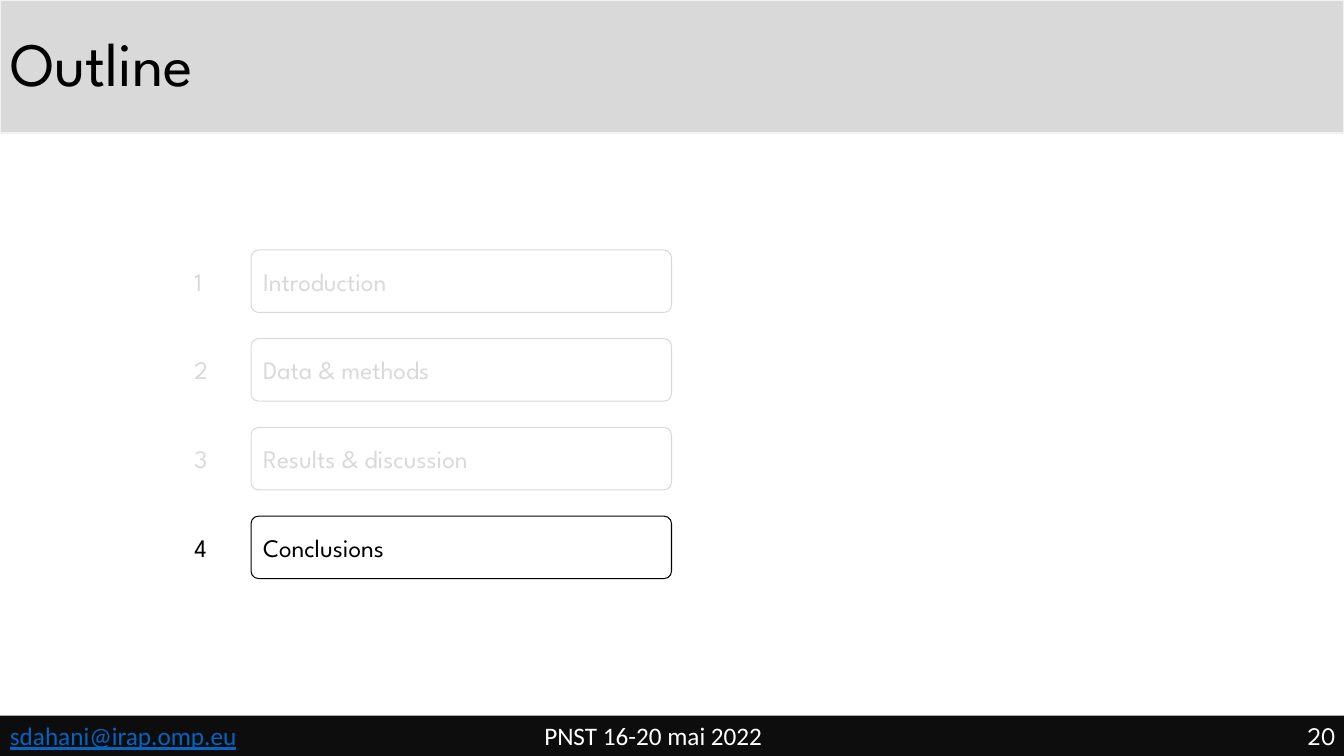
from dataclasses import dataclass

import pptx
import pptx.dml.color
import pptx.enum.shapes
import pptx.enum.text
import pptx.shapes.autoshape
import pptx.slide
import pptx.text.text
import pptx.util

Inches = pptx.util.Inches
Pt = pptx.util.Pt
MSO_SHAPE = pptx.enum.shapes.MSO_SHAPE
MIDDLE = pptx.enum.text.MSO_ANCHOR.MIDDLE
LEFT = pptx.enum.text.PP_ALIGN.LEFT

COLORS = {
    "band": "D9D9D9",
    "band_edge": "F2F2F2",
    "footer": "0D0D0D",
    "muted": "D9D9D9",
    "active": "000000",
    "link": "0563C1",
    "light": "FFFFFF",
}
HEADING_FONT = "League Spartan"
FOOTER_FONT = "Calibri"

SLIDE_WIDTH, SLIDE_HEIGHT = 13.33, 7.5
FOOTER_TOP, LINE_HEIGHT = 7.1, 0.4
FIRST_SECTION_TOP, SECTION_PITCH = 2.48, 0.88
SECTION_LEFT, SECTION_WIDTH, SECTION_HEIGHT = 2.49, 4.17, 0.62
NUMBER_LEFT, NUMBER_WIDTH = 1.83, 0.34

SECTIONS = ["Introduction", "Data & methods", "Results & discussion", "Conclusions"]
CURRENT_SECTION = "Conclusions"


@dataclass
class Caption:
    text: str
    left: float
    top: float
    width: float
    color: str
    font: str = HEADING_FONT
    underline: bool = False


FOOTER_CAPTIONS = [
    Caption("sdahani@irap.omp.eu", 0, FOOTER_TOP, 2.53, "link", FOOTER_FONT, True),
    Caption("PNST 16-20 mai 2022", 5.3, FOOTER_TOP, 2.63, "light", FOOTER_FONT),
    Caption("20", 12.87, FOOTER_TOP, 0.59, "light"),
]


def rgb(color: str) -> pptx.dml.color.RGBColor:
    return pptx.dml.color.RGBColor.from_string(COLORS[color])


def write(frame: pptx.text.text.TextFrame, text: str, color: str, size: int = 18,
          font: str = HEADING_FONT, underline: bool = False) -> None:
    frame.text = text
    frame.word_wrap = True
    paragraph = frame.paragraphs[0]
    paragraph.alignment = LEFT
    run_font = paragraph.runs[0].font
    run_font.name = font
    run_font.size = Pt(size)
    run_font.color.rgb = rgb(color)
    run_font.underline = underline


def add_caption(slide: pptx.slide.Slide, caption: Caption) -> None:
    box = slide.shapes.add_textbox(Inches(caption.left), Inches(caption.top),
                                   Inches(caption.width), Inches(LINE_HEIGHT))
    write(box.text_frame, caption.text, caption.color,
          font=caption.font, underline=caption.underline)


def add_title(slide: pptx.slide.Slide, text: str) -> None:
    title = slide.shapes.title
    title.left, title.top = Inches(0), Inches(0)
    title.width, title.height = Inches(SLIDE_WIDTH), Inches(1.32)
    title.fill.solid()
    title.fill.fore_color.rgb = rgb("band")
    title.line.color.rgb = rgb("band_edge")
    title.line.width = Pt(1)
    write(title.text_frame, text, "active", size=44)
    title.text_frame.vertical_anchor = MIDDLE
    title.text_frame.paragraphs[0].line_spacing = 0.9


def add_footer(slide: pptx.slide.Slide) -> None:
    bar = slide.shapes.add_shape(MSO_SHAPE.RECTANGLE, Inches(0), Inches(FOOTER_TOP),
                                 Inches(SLIDE_WIDTH), Inches(LINE_HEIGHT))
    bar.shadow.inherit = False
    bar.fill.solid()
    bar.fill.fore_color.rgb = rgb("footer")
    bar.line.fill.background()
    for caption in FOOTER_CAPTIONS:
        add_caption(slide, caption)


def add_section(slide: pptx.slide.Slide, number: int, name: str) -> None:
    top = FIRST_SECTION_TOP + (number - 1) * SECTION_PITCH
    color = "active" if name == CURRENT_SECTION else "muted"
    box = slide.shapes.add_shape(MSO_SHAPE.ROUNDED_RECTANGLE, Inches(SECTION_LEFT), Inches(top),
                                 Inches(SECTION_WIDTH), Inches(SECTION_HEIGHT))
    box.adjustments[0] = 0.12
    box.shadow.inherit = False
    box.fill.background()
    box.line.color.rgb = rgb(color)
    box.line.width = Pt(0.75)
    write(box.text_frame, name, color)
    box.text_frame.vertical_anchor = MIDDLE

    number_top = top + (SECTION_HEIGHT - LINE_HEIGHT) / 2
    add_caption(slide, Caption(str(number), NUMBER_LEFT, number_top, NUMBER_WIDTH, color))


def main() -> None:
    presentation = pptx.Presentation()
    presentation.slide_width = Inches(SLIDE_WIDTH)
    presentation.slide_height = Inches(SLIDE_HEIGHT)
    slide = presentation.slides.add_slide(presentation.slide_layouts.get_by_name("Title Only"))
    add_title(slide, "Outline")
    for number, name in enumerate(SECTIONS, start=1):
        add_section(slide, number, name)
    add_footer(slide)
    presentation.save("out.pptx")


if __name__ == "__main__":
    main()
